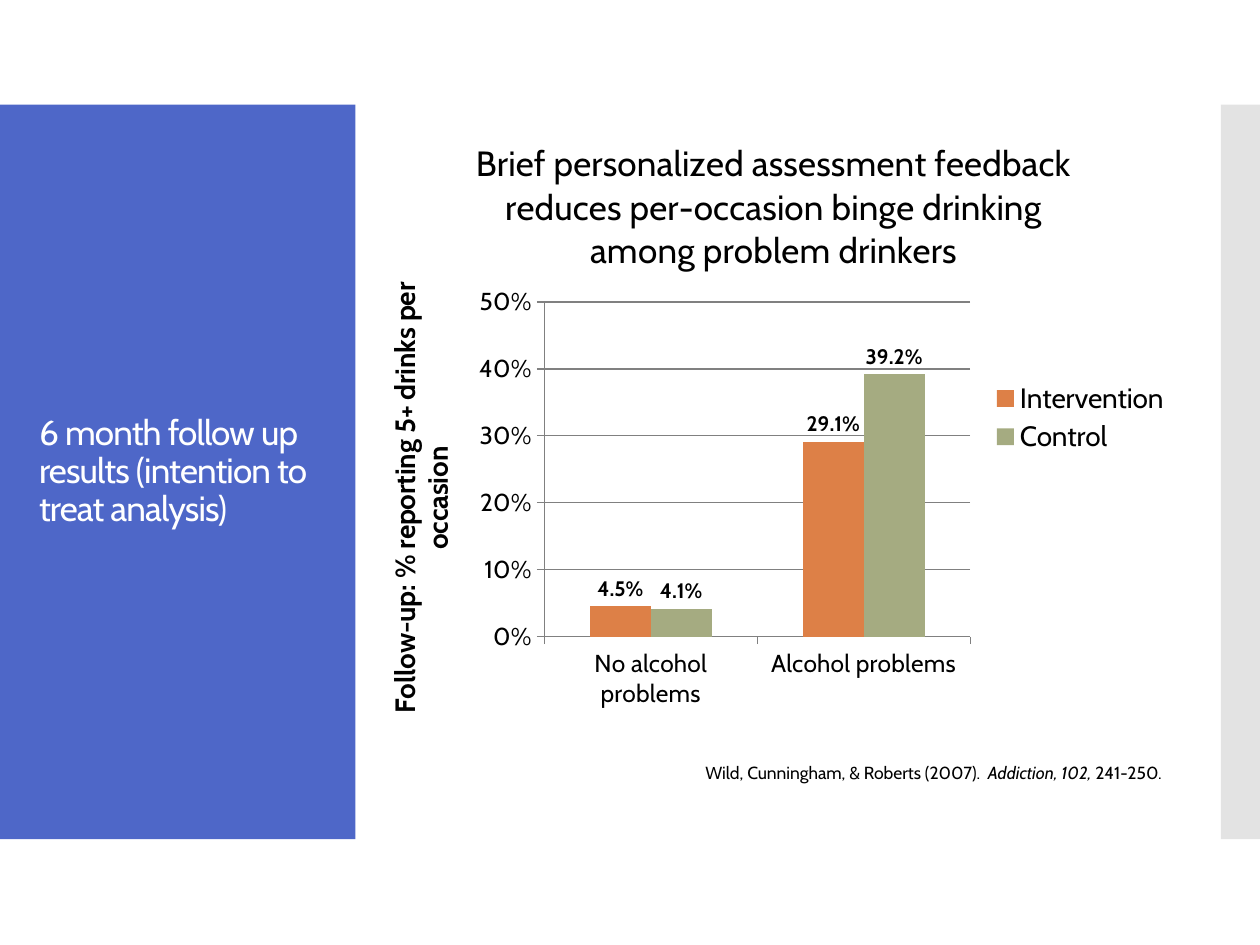
from lxml import etree
from pptx import Presentation
from pptx.chart.data import CategoryChartData
from pptx.dml.color import RGBColor
from pptx.enum.chart import XL_CHART_TYPE as ChartType
from pptx.enum.chart import XL_LABEL_POSITION as LabelPos
from pptx.enum.chart import XL_LEGEND_POSITION as LegendPos
from pptx.enum.chart import XL_TICK_MARK as Tick
from pptx.enum.shapes import MSO_SHAPE as Shape
from pptx.enum.text import MSO_ANCHOR as Anchor
from pptx.enum.text import MSO_AUTO_SIZE as AutoSize
from pptx.enum.text import PP_ALIGN as Align
from pptx.oxml.ns import qn
from pptx.util import Inches, Pt


def rgb(value):
    return RGBColor.from_string(value)


class SlideBuilder:
    font = "Cabin"
    ink = "000000"
    line = "808080"

    def __init__(self, slide):
        self.s = slide

    def style(self, font, size, color=ink, bold=False):
        font.name = self.font
        font.size = Pt(size)
        font.bold = bold
        font.color.rgb = rgb(color)

    def panel(self, x, y, w, h, color, alpha=100):
        sp = self.s.shapes.add_shape(
            Shape.RECTANGLE, Inches(x), Inches(y), Inches(w), Inches(h))
        sp.shadow.inherit = False
        sp.fill.solid()
        sp.fill.fore_color.rgb = rgb(color)
        sp.line.fill.background()
        if alpha < 100:
            clr = sp._element.spPr.find(qn("a:solidFill"))[0]
            etree.SubElement(clr, qn("a:alpha")).set("val", str(alpha * 1000))

    def title(self, x, y, w, h, text, size, color):
        sp = self.s.shapes.title
        sp.left, sp.top, sp.width, sp.height = map(Inches, (x, y, w, h))
        tf = sp.text_frame
        tf.text = text
        tf.word_wrap = True
        tf.auto_size = AutoSize.NONE
        tf.vertical_anchor = Anchor.MIDDLE
        p = tf.paragraphs[0]
        p.alignment = Align.LEFT
        p.line_spacing = 0.9
        self.style(p.font, size, color)
        p.runs[0]._r.get_or_add_rPr().set("spc", "-50")
        self.s.shapes._spTree.append(sp._element)

    def citation(self, x, y, w, h, runs, size):
        tf = self.s.shapes.add_textbox(
            Inches(x), Inches(y), Inches(w), Inches(h)).text_frame
        tf.word_wrap = False
        tf.auto_size = AutoSize.SHAPE_TO_FIT_TEXT
        p = tf.paragraphs[0]
        for text, italic in runs:
            r = p.add_run()
            r.text = text
            self.style(r.font, size)
            r.font.italic = italic

    def chart_title(self, owner, text, size, bold):
        tf = owner.text_frame
        tf.text = text
        self.style(tf.paragraphs[0].font, size, bold=bold)

    def axis(self, axis, size):
        axis.major_tick_mark = Tick.OUTSIDE
        axis.minor_tick_mark = Tick.NONE
        axis.format.line.color.rgb = rgb(self.line)
        self.style(axis.tick_labels.font, size)

    def plot_layout(self, chart, x, y, w, h):
        area = chart._chartSpace.chart.plotArea
        for old in area.findall(qn("c:layout")):
            area.remove(old)
        layout = etree.Element(qn("c:layout"))
        manual = etree.SubElement(layout, qn("c:manualLayout"))
        settings = {"layoutTarget": "inner", "xMode": "edge", "yMode": "edge",
                    "x": x, "y": y, "w": w, "h": h}
        for tag, value in settings.items():
            etree.SubElement(manual, qn(f"c:{tag}")).set("val", str(value))
        area.insert(0, layout)

    def column_chart(self, x, y, w, h, title, value_title, categories, series):
        data = CategoryChartData(number_format="0.0%")
        data.categories = categories
        for name, values, _ in series:
            data.add_series(name, values)
        chart = self.s.shapes.add_chart(
            ChartType.COLUMN_CLUSTERED, Inches(x), Inches(y),
            Inches(w), Inches(h), data).chart
        self.style(chart.font, 10)
        chart.has_title = True
        self.chart_title(chart.chart_title, title, 20, False)
        chart.chart_title.include_in_layout = False

        self.axis(chart.category_axis, 14)
        axis = chart.value_axis
        self.axis(axis, 14)
        axis.minimum_scale, axis.maximum_scale, axis.major_unit = 0, 0.5, 0.1
        axis.tick_labels.number_format = "0%"
        axis.tick_labels.number_format_is_linked = False
        axis.major_gridlines.format.line.color.rgb = rgb(self.line)
        axis.has_title = True
        self.chart_title(axis.axis_title, value_title, 16, True)

        chart.has_legend = True
        chart.legend.position = LegendPos.RIGHT
        chart.legend.include_in_layout = False
        self.style(chart.legend.font, 16)

        plot = chart.plots[0]
        plot.gap_width = 150
        plot.overlap = 0
        plot.vary_by_categories = False
        for bars, (_, _, color) in zip(plot.series, series):
            bars.format.fill.solid()
            bars.format.fill.fore_color.rgb = rgb(color)
            labels = bars.data_labels
            labels.show_value = True
            labels.number_format = "0.0%"
            labels.number_format_is_linked = False
            labels.position = LabelPos.OUTSIDE_END
            self.style(labels.font, 12, bold=True)
        self.plot_layout(chart, 0.22, 0.31, 0.52, 0.55)


def main():
    prs = Presentation()
    prs.slide_width, prs.slide_height = Inches(10), Inches(7.5)
    b = SlideBuilder(prs.slides.add_slide(prs.slide_layouts[5]))
    b.panel(0, 0.83, 2.82, 5.83, "4E67C8")
    b.panel(9.69, 0.83, 0.31, 5.83, "C8C8C8", alpha=50)
    b.title(0.21, 1.23, 2.42, 5.03,
            "6 month follow up results (intention to treat analysis)",
            20, "FFFFFF")
    b.column_chart(
        2.89, 0.9, 6.5, 4.83,
        "Brief personalized assessment feedback reduces per-occasion "
        "binge drinking among problem drinkers",
        "Follow-up: % reporting 5+ drinks per occasion",
        ["No alcohol problems", "Alcohol problems"],
        [("Intervention", (0.045, 0.291), "DD8047"),
         ("Control", (0.041, 0.392), "A5AB81")])
    b.citation(5.5, 6, 3.82, 0.27, [
        ("Wild, Cunningham, & Roberts (2007).  ", False),
        ("Addiction, 102, ", True),
        ("241-250.", False)], 10)
    prs.save("out.pptx")


if __name__ == "__main__":
    main()
